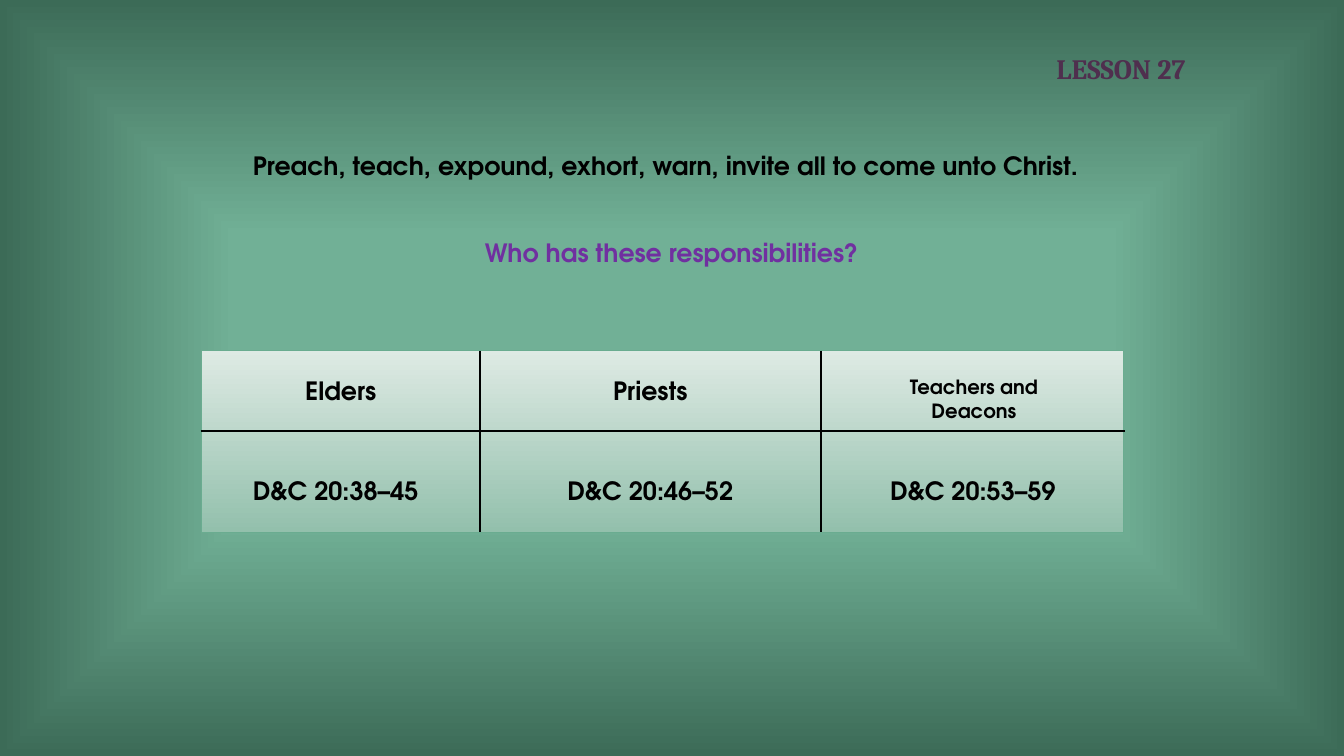
from dataclasses import dataclass

from lxml import etree
from pptx import Presentation
from pptx.dml.color import RGBColor
from pptx.enum import shapes, text
from pptx.oxml import ns
from pptx.util import Inches, Pt


@dataclass(frozen=True)
class Theme:
    """Colours, fonts and type sizes of the slide."""
    ink: str = "000000"
    question: str = "7030A0"
    lesson: str = "4F2F4E"
    backdrop: tuple = ("71B096", "3C6B57")
    panel: tuple = ("DEEAE4", "93C0AC")
    panel_edge: str = "6AAC90"
    body_font: str = "TeX Gyre Adventor"
    lesson_font: str = "Cambria"
    lesson_size: int = 20
    body_size: int = 18
    small_size: int = 14
    rule_width: float = 1.5
    edge_width: float = 0.75


THEME = Theme()
OFFICES = (
    ("Elders", THEME.body_size, 1.38, "D&C 20:38–45", 1.33),
    ("Priests", THEME.body_size, 4.45, "D&C 20:46–52", 4.45),
    ("Teachers and Deacons", THEME.small_size, 7.66, "D&C 20:53–59", 7.65),
)


def add_label(slide, box, words, size=THEME.body_size, color=THEME.ink,
              font=THEME.body_font, align=text.PP_ALIGN.LEFT, wrap=True):
    """Place a text box with one bold paragraph."""
    frame = slide.shapes.add_textbox(*map(Inches, box)).text_frame
    frame.word_wrap = wrap
    paragraph = frame.paragraphs[0]
    paragraph.alignment = align
    run = paragraph.add_run()
    run.text = words
    run.font.size = Pt(size)
    run.font.name = font
    run.font.bold = True
    run.font.color.rgb = RGBColor.from_string(color)


def fill_gradient(fill, colors, start=0.0):
    """Apply a two-colour gradient running downwards."""
    fill.gradient()
    fill.gradient_angle = 270
    for stop, color, position in zip(fill.gradient_stops, colors, (start, 1.0)):
        stop.color.rgb = RGBColor.from_string(color)
        stop.position = position


def paint_backdrop(slide):
    """Fill the background with a gradient that darkens towards the edges."""
    fill_gradient(slide.background.fill, THEME.backdrop, start=0.38)
    gradient = slide.element.find(".//" + ns.qn("a:gradFill"))
    gradient.remove(gradient.find(ns.qn("a:lin")))
    outline = etree.SubElement(gradient, ns.qn("a:path"), path="shape")
    etree.SubElement(outline, ns.qn("a:fillToRect"),
                     dict.fromkeys("ltrb", "50000"))


def add_panel(slide, box):
    """Draw the pale gradient panel behind the offices."""
    panel = slide.shapes.add_shape(shapes.MSO_SHAPE.RECTANGLE, *map(Inches, box))
    panel.shadow.inherit = False
    fill_gradient(panel.fill, THEME.panel)
    panel.line.color.rgb = RGBColor.from_string(THEME.panel_edge)
    panel.line.width = Pt(THEME.edge_width)


def add_rule(slide, start, end):
    """Draw a straight dividing line."""
    rule = slide.shapes.add_connector(
        shapes.MSO_CONNECTOR.STRAIGHT, *map(Inches, (*start, *end)))
    rule.line.color.rgb = RGBColor.from_string(THEME.ink)
    rule.line.width = Pt(THEME.rule_width)
    etree.SubElement(rule._element.spPr, ns.qn("a:effectLst"))


def add_offices(slide, left, top, width, height):
    """Place the panel of priesthood offices with its rules and labels."""
    add_panel(slide, (left, top, width, height))
    add_rule(slide, (left - 0.01, top + 0.8), (left + width + 0.02, top + 0.8))
    for divider in (6.14, 2.76):
        add_rule(slide, (left + divider, top), (left + divider, top + height))
    name_width, verses_width = 1.57, 2.26
    for name, size, name_center, verses, verses_center in OFFICES:
        add_label(slide, (left + name_center - name_width / 2, top + 0.19,
                          name_width, 0.4),
                  name, size=size, align=text.PP_ALIGN.CENTER)
        add_label(slide, (left + verses_center - verses_width / 2, top + 1.19,
                          verses_width, 0.4),
                  verses, align=text.PP_ALIGN.CENTER)


def build_lesson_slide(slide):
    """Lay out the heading, the question and the offices."""
    paint_backdrop(slide)
    add_label(slide, (10.38, 0.46, 1.71, 0.51), "LESSON 27",
              size=THEME.lesson_size, color=THEME.lesson, font=THEME.lesson_font)
    add_label(slide, (2.41, 1.44, 8.52, 0.4),
              "Preach, teach, expound, exhort, warn, invite all to come unto Christ.")
    add_label(slide, (4.71, 2.31, 3.92, 0.4), "Who has these responsibilities?",
              color=THEME.question, wrap=False)
    add_offices(slide, 2.0, 3.48, 9.14, 1.8)


def main():
    """Build and save the presentation."""
    deck = Presentation()
    deck.slide_width, deck.slide_height = Inches(13.33), Inches(7.5)
    build_lesson_slide(deck.slides.add_slide(deck.slide_layouts[6]))
    deck.save("out.pptx")


if __name__ == "__main__":
    main()
